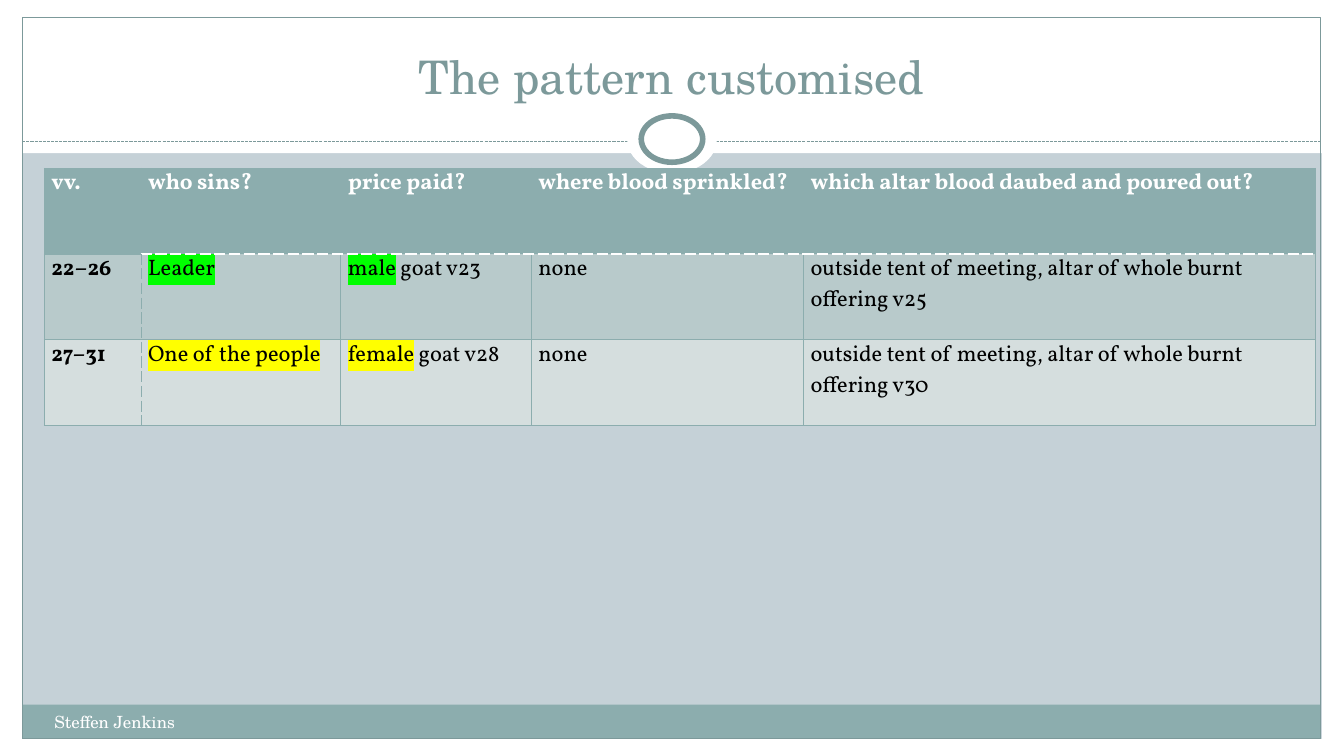
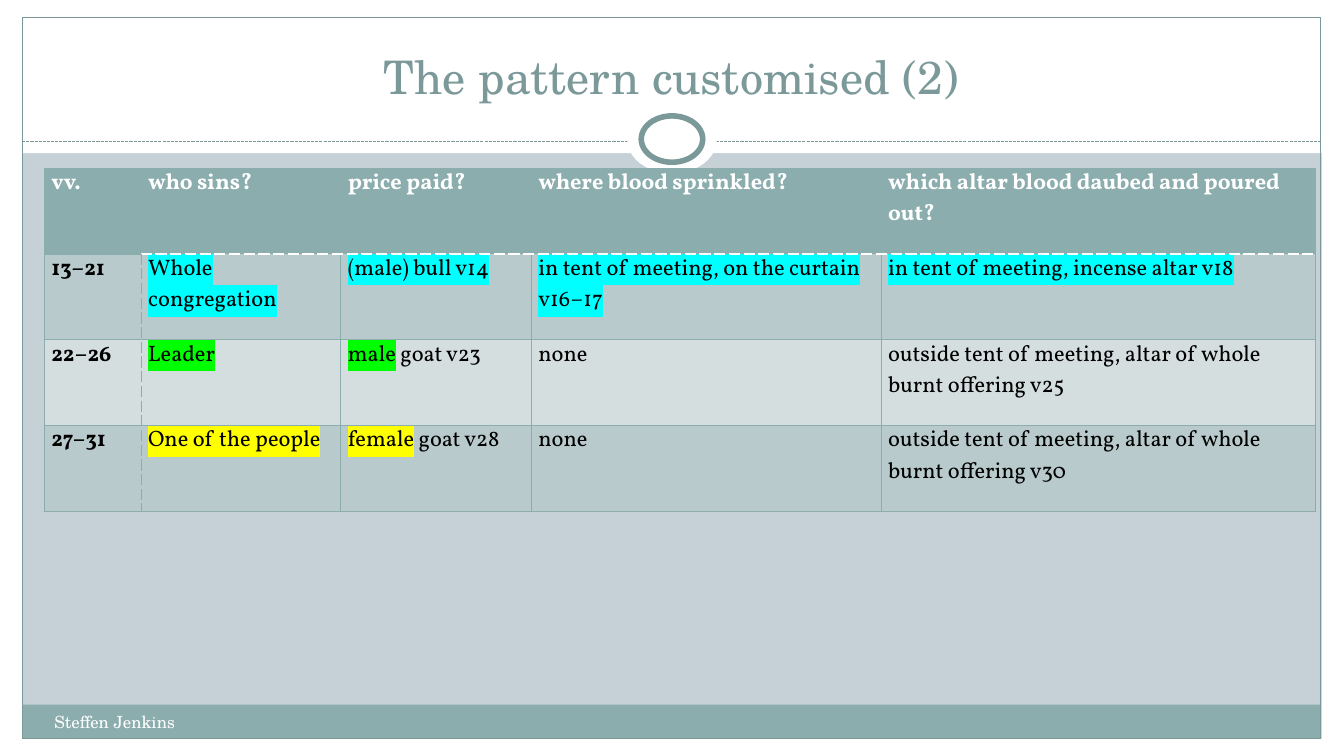
import itertools

import lxml.etree
import pptx
import pptx.dml.color
import pptx.enum.dml
import pptx.enum.shapes
import pptx.enum.text
import pptx.oxml.ns
import pptx.util

Inches = pptx.util.Inches
Pt = pptx.util.Pt
qn = pptx.oxml.ns.qn

TITLE_FONT = "TeX Gyre Schola"
TABLE_FONT = "Vollkorn"
WHITE = "FFFFFF"
BLACK = "000000"
BACKGROUND = "C5D1D7"
TEAL = "8CADAE"
DARK_TEAL = "7C999A"
ROW_FILLS = ("B8CACB", "D5DEDE")
GREEN = "00FF00"
YELLOW = "FFFF00"
CYAN = "00FFFF"

SLIDE_WIDTH = 13.33
SLIDE_HEIGHT = 7.5
MARGIN = 0.22
FRAME_WIDTH = 12.88
TEXT_LEFT = 0.44
TABLE_WIDTH = 12.61
ROW_HEIGHT = 0.85
FIRST_WIDTHS = (0.96, 1.98, 1.89)

HEADINGS = (
    "vv.",
    "who sins?",
    "price paid?",
    "where blood sprinkled?",
    "which altar blood daubed and poured out?",
)
CONGREGATION = (
    [("13–21", None)],
    [("Whole congregation", CYAN)],
    [("(male) bull v14", CYAN)],
    [("in tent of meeting, on the curtain v16–17", CYAN)],
    [("in tent of meeting, incense altar v18", CYAN)],
)
LEADER = (
    [("22–26", None)],
    [("Leader", GREEN)],
    [("male", GREEN), (" goat v23", None)],
    [("none", None)],
    [("outside tent of meeting, altar of whole burnt offering v25", None)],
)
PEOPLE = (
    [("27–31", None)],
    [("One of the people", YELLOW)],
    [("female", YELLOW), (" goat v28", None)],
    [("none", None)],
    [("outside tent of meeting, altar of whole burnt offering v30", None)],
)


def rgb(value):
    """Turn a hex string into a colour."""
    return pptx.dml.color.RGBColor.from_string(value)


def add_run(paragraph, text, font, size, color, bold=False, highlight=None):
    """Append formatted text to a paragraph."""
    run = paragraph.add_run()
    run.text = text
    run.font.size = Pt(size)
    run.font.bold = bold
    run.font.color.rgb = rgb(color)
    run.font.name = font
    if highlight:
        element = lxml.etree.Element(qn("a:highlight"))
        lxml.etree.SubElement(element, qn("a:srgbClr"), val=highlight)
        run.font._element.find(qn("a:solidFill")).addnext(element)


def add_text_box(slide, box, text, anchor, alignment, **text_format):
    """Add a wrapping text box with one paragraph."""
    frame = slide.shapes.add_textbox(*map(Inches, box)).text_frame
    frame.word_wrap = True
    frame.vertical_anchor = anchor
    frame.paragraphs[0].alignment = alignment
    add_run(frame.paragraphs[0], text, **text_format)


def add_box(slide, kind, box, fill=None, line=None, line_width=0.75):
    """Add a preset shape with an optional fill and outline."""
    shape = slide.shapes.add_shape(kind, *map(Inches, box))
    shape.shadow.inherit = False
    if fill:
        shape.fill.solid()
        shape.fill.fore_color.rgb = rgb(fill)
    else:
        shape.fill.background()
    if line:
        shape.line.color.rgb = rgb(line)
        shape.line.width = Pt(line_width)
    else:
        shape.line.fill.background()


def add_dashed_rule(slide, left, right, top):
    """Add a horizontal dashed line."""
    connector = slide.shapes.add_connector(
        pptx.enum.shapes.MSO_CONNECTOR.STRAIGHT,
        Inches(left), Inches(top), Inches(right), Inches(top),
    )
    connector.line.color.rgb = rgb(DARK_TEAL)
    connector.line.width = Pt(0.75)
    connector.line.dash_style = pptx.enum.dml.MSO_LINE.SQUARE_DOT
    lxml.etree.SubElement(connector._element.spPr, qn("a:effectLst"))


def add_frame(slide):
    """Draw the bands, border, rule and ring shared by the slides."""
    rectangle = pptx.enum.shapes.MSO_SHAPE.RECTANGLE
    oval = pptx.enum.shapes.MSO_SHAPE.OVAL
    slide.background.fill.solid()
    slide.background.fill.fore_color.rgb = rgb(BACKGROUND)
    white_bands = (
        (0, 7.33, SLIDE_WIDTH, 0.17),
        (0, 0, SLIDE_WIDTH, 1.52),
        (0, 0, MARGIN, SLIDE_HEIGHT),
        (SLIDE_WIDTH - MARGIN, 0, MARGIN, SLIDE_HEIGHT),
    )
    for band in white_bands:
        add_box(slide, rectangle, band, fill=WHITE)
    add_box(slide, rectangle, (MARGIN, 6.99, FRAME_WIDTH, 0.34), fill=TEAL)
    add_box(slide, rectangle, (MARGIN, 0.17, FRAME_WIDTH, 7.16), line=DARK_TEAL)
    add_dashed_rule(slide, MARGIN, MARGIN + FRAME_WIDTH, 1.4)
    add_box(slide, oval, (6.22, 1.05, 0.89, 0.67), fill=WHITE)
    add_box(slide, oval, (6.36, 1.15, 0.61, 0.46), fill=WHITE, line=DARK_TEAL, line_width=4)


def set_border(cell, side, color=TEAL, width=0.75, dash="solid"):
    """Draw one border of a table cell."""
    line = lxml.etree.SubElement(
        cell._tc.get_or_add_tcPr(), qn(f"a:ln{side}"), w=str(Pt(width))
    )
    fill = lxml.etree.SubElement(line, qn("a:solidFill"))
    lxml.etree.SubElement(fill, qn("a:srgbClr"), val=color)
    lxml.etree.SubElement(line, qn("a:prstDash"), val=dash)


def border_styles(row, column):
    """Return the dashed borders of the cell at a position."""
    header_rule = {"color": WHITE, "width": 0.9, "dash": "sysDash"}
    column_rule = {"width": 0.9, "dash": "sysDash"}
    styles = {}
    if column > 0 and row < 2:
        styles["B" if row == 0 else "T"] = header_rule
    if row > 0 and column < 2:
        styles["R" if column == 0 else "L"] = column_rule
    return styles


def fill_cell(cell, row, column, runs):
    """Set the borders, fill and text of a table cell."""
    styles = border_styles(row, column)
    for side in "LRTB":
        set_border(cell, side, **styles.get(side, {}))
    cell.fill.solid()
    cell.fill.fore_color.rgb = rgb(ROW_FILLS[(row - 1) % 2] if row else TEAL)
    cell.margin_left = cell.margin_right = Inches(0.07)
    cell.margin_top = cell.margin_bottom = 0
    paragraph = cell.text_frame.paragraphs[0]
    paragraph.space_after = Pt(6)
    for text, highlight in runs:
        add_run(
            paragraph, text, font=TABLE_FONT, size=16,
            color=BLACK if row else WHITE,
            bold=row == 0 or column == 0, highlight=highlight,
        )


def add_offering_table(slide, body_rows, sprinkled_width):
    """Add the table of offerings under its headings."""
    rows = [[[(heading, None)] for heading in HEADINGS], *body_rows]
    widths = (*FIRST_WIDTHS, sprinkled_width)
    widths = (*widths, TABLE_WIDTH - sum(widths))
    table = slide.shapes.add_table(
        len(rows), len(widths), Inches(TEXT_LEFT), Inches(1.67),
        Inches(TABLE_WIDTH), Inches(ROW_HEIGHT * len(rows)),
    ).table
    for column, width in zip(table.columns, widths):
        column.width = Inches(width)
    for row in table.rows:
        row.height = Inches(ROW_HEIGHT)
    for row, column in itertools.product(range(len(rows)), range(len(widths))):
        fill_cell(table.cell(row, column), row, column, rows[row][column])


def add_slide(presentation, title, body_rows, sprinkled_width):
    """Add a framed slide with a title, footer and table."""
    slide = presentation.slides.add_slide(presentation.slide_layouts[6])
    add_frame(slide)
    anchors = pptx.enum.text.MSO_ANCHOR
    alignments = pptx.enum.text.PP_ALIGN
    add_text_box(
        slide, (TEXT_LEFT, 0.25, 12.44, 0.83), title, anchors.BOTTOM,
        alignments.CENTER, font=TITLE_FONT, size=33, color=DARK_TEAL,
    )
    add_text_box(
        slide, (TEXT_LEFT, 7.01, 5.22, 0.4), "Steffen Jenkins", anchors.TOP,
        alignments.LEFT, font=TITLE_FONT, size=12, color=WHITE,
    )
    add_offering_table(slide, body_rows, sprinkled_width)


def main():
    """Build and save the presentation."""
    presentation = pptx.Presentation()
    presentation.slide_width = Inches(SLIDE_WIDTH)
    presentation.slide_height = Inches(SLIDE_HEIGHT)
    add_slide(presentation, "The pattern customised", (LEADER, PEOPLE), 2.7)
    add_slide(
        presentation, "The pattern customised (2)",
        (CONGREGATION, LEADER, PEOPLE), 3.47,
    )
    presentation.save("out.pptx")


if __name__ == "__main__":
    main()
